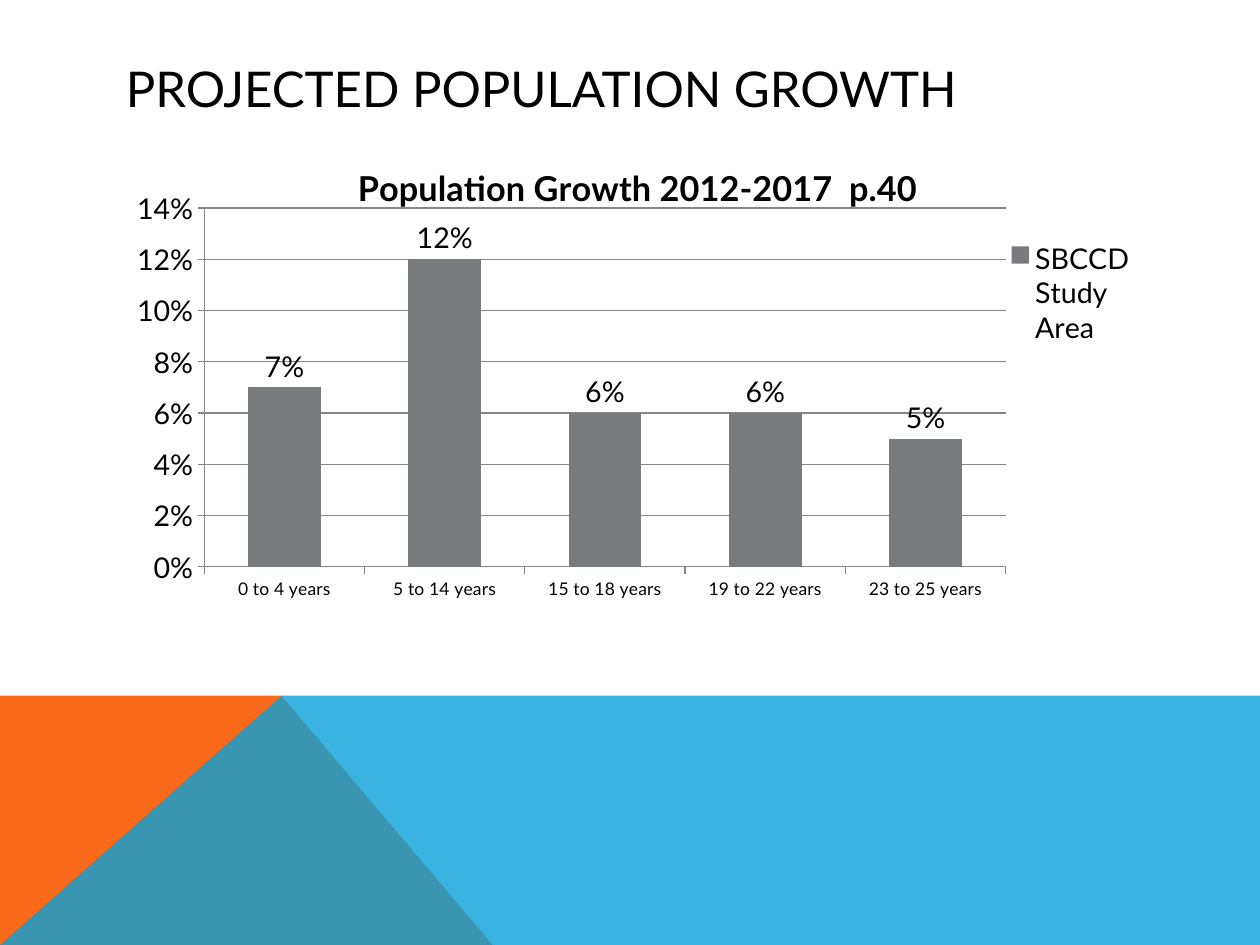
from lxml import etree
from pptx import Presentation
from pptx.chart.data import CategoryChartData
from pptx.dml.color import RGBColor
from pptx.enum.chart import XL_CHART_TYPE, XL_LABEL_POSITION, XL_LEGEND_POSITION, XL_TICK_MARK
from pptx.enum.text import MSO_ANCHOR, MSO_AUTO_SIZE, PP_ALIGN
from pptx.oxml import parse_xml
from pptx.oxml.ns import nsdecls, qn
from pptx.util import Pt

COLUMNS = XL_CHART_TYPE.COLUMN_CLUSTERED
OUTSIDE_END = XL_LABEL_POSITION.OUTSIDE_END
LEGEND_RIGHT = XL_LEGEND_POSITION.RIGHT
TICK_OUT = XL_TICK_MARK.OUTSIDE
MIDDLE = MSO_ANCHOR.MIDDLE
NO_AUTOFIT = MSO_AUTO_SIZE.NONE
LEFT = PP_ALIGN.LEFT

BLACK = RGBColor(0, 0, 0)
ORANGE = RGBColor(0xF9, 0x6A, 0x1B)
BLUE = RGBColor(0x08, 0xA1, 0xD9)
BAR_GRAY = RGBColor(0x79, 0x7B, 0x7E)
LINE_GRAY = RGBColor(0x86, 0x86, 0x86)
FONT = "Lato"
PERCENT = "0%"

WIDTH, HEIGHT = 793.7, 595.28
BAND_TOP = 438.3
PEAK = (177.3, BAND_TOP)
BOTTOM_LEFT = (0, HEIGHT)
CONTENT_LEFT, CONTENT_WIDTH = 71.3, 653

GROWTH = {
    "0 to 4 years": 0.07,
    "5 to 14 years": 0.12,
    "15 to 18 years": 0.06,
    "19 to 22 years": 0.06,
    "23 to 25 years": 0.05,
}


def style_font(font, size, bold=False):
    font.name = FONT
    font.size = Pt(size)
    font.bold = bold
    font.color.rgb = BLACK


def add_band(slide, corners, color, opacity=100):
    start, *others = [(Pt(x), Pt(y)) for x, y in corners]
    builder = slide.shapes.build_freeform(*start)
    builder.add_line_segments(others, close=True)
    band = builder.convert_to_shape()
    band.shadow.inherit = False
    band.line.fill.background()
    band.fill.solid()
    band.fill.fore_color.rgb = color
    if opacity < 100:
        rgb = band._element.spPr.find(".//" + qn("a:srgbClr"))
        etree.SubElement(rgb, qn("a:alpha")).set("val", str(opacity * 1000))


def set_title(slide, text):
    title = slide.shapes.title
    title.left, title.top = Pt(CONTENT_LEFT), Pt(31.7)
    title.width, title.height = Pt(CONTENT_WIDTH), Pt(47.5)
    frame = title.text_frame
    frame.text = text
    frame.word_wrap = True
    frame.auto_size = NO_AUTOFIT
    frame.vertical_anchor = MIDDLE
    frame.margin_left = frame.margin_right = Pt(8)
    frame.margin_top = frame.margin_bottom = Pt(4)
    heading = frame.paragraphs[0]
    heading.alignment = LEFT
    style_font(heading.font, 31)


def make_layout(x, y, size=None, inner=False):
    target = '<c:layoutTarget val="inner"/>' if inner else ""
    extent = f'<c:w val="{size[0]}"/><c:h val="{size[1]}"/>' if size else ""
    return parse_xml(
        f'<c:layout {nsdecls("c")}><c:manualLayout>{target}'
        '<c:xMode val="edge"/><c:yMode val="edge"/>'
        f'<c:x val="{x}"/><c:y val="{y}"/>{extent}'
        '</c:manualLayout></c:layout>')


def place_part(part, layout, position):
    for old in part.findall(qn("c:layout")):
        part.remove(old)
    part.insert(position, layout)


def style_axis(axis, size):
    axis.major_tick_mark = TICK_OUT
    axis.format.line.color.rgb = LINE_GRAY
    axis.format.line.width = Pt(0.75)
    style_font(axis.tick_labels.font, size)


def add_growth_chart(slide):
    data = CategoryChartData(number_format=PERCENT)
    data.categories = list(GROWTH)
    data.add_series("SBCCD  Study Area", list(GROWTH.values()))
    chart = slide.shapes.add_chart(
        COLUMNS, Pt(CONTENT_LEFT), Pt(95.6), Pt(CONTENT_WIDTH), Pt(311), data).chart
    style_font(chart.font, 18)

    chart.has_title = True
    heading = chart.chart_title.text_frame
    heading.text = "Population Growth 2012-2017  p.40"
    style_font(heading.paragraphs[0].font, 21.6, bold=True)

    style_axis(chart.category_axis, 11)
    growth_axis = chart.value_axis
    style_axis(growth_axis, 18)
    growth_axis.minimum_scale, growth_axis.maximum_scale = 0, 0.14
    growth_axis.major_unit = 0.02
    growth_axis.tick_labels.number_format = PERCENT
    growth_axis.tick_labels.number_format_is_linked = False
    growth_axis.has_major_gridlines = True
    growth_axis.major_gridlines.format.line.color.rgb = LINE_GRAY
    growth_axis.major_gridlines.format.line.width = Pt(0.75)

    columns = chart.plots[0]
    columns.gap_width, columns.overlap = 120, 30
    columns.vary_by_categories = False
    study_area = columns.series[0]
    study_area.format.fill.solid()
    study_area.format.fill.fore_color.rgb = BAR_GRAY
    labels = study_area.data_labels
    labels.show_value = True
    labels.number_format = PERCENT
    labels.number_format_is_linked = False
    labels.position = OUTSIDE_END
    style_font(labels.font, 18)

    chart.has_legend = True
    chart.legend.position = LEGEND_RIGHT
    chart.legend.include_in_layout = False
    style_font(chart.legend.font, 18)

    plot_area = chart._chartSpace.chart.plotArea
    place_part(plot_area, make_layout(0.088, 0.114, (0.773, 0.727), inner=True), 0)
    place_part(chart.legend._element, make_layout(0.857, 0.17, (0.14, 0.23)), 1)
    place_part(chart.chart_title._element, make_layout(0.23, 0.01), 1)


def main():
    deck = Presentation()
    deck.slide_width, deck.slide_height = Pt(WIDTH), Pt(HEIGHT)
    slide = deck.slides.add_slide(deck.slide_layouts[5])
    add_band(slide, [BOTTOM_LEFT, (0, BAND_TOP), PEAK, (310.3, HEIGHT)], ORANGE)
    add_band(slide, [BOTTOM_LEFT, PEAK, (WIDTH, BAND_TOP), (WIDTH, HEIGHT)], BLUE, 80)
    set_title(slide, "PROJECTED POPULATION GROWTH")
    add_growth_chart(slide)
    deck.save("out.pptx")


if __name__ == "__main__":
    main()
